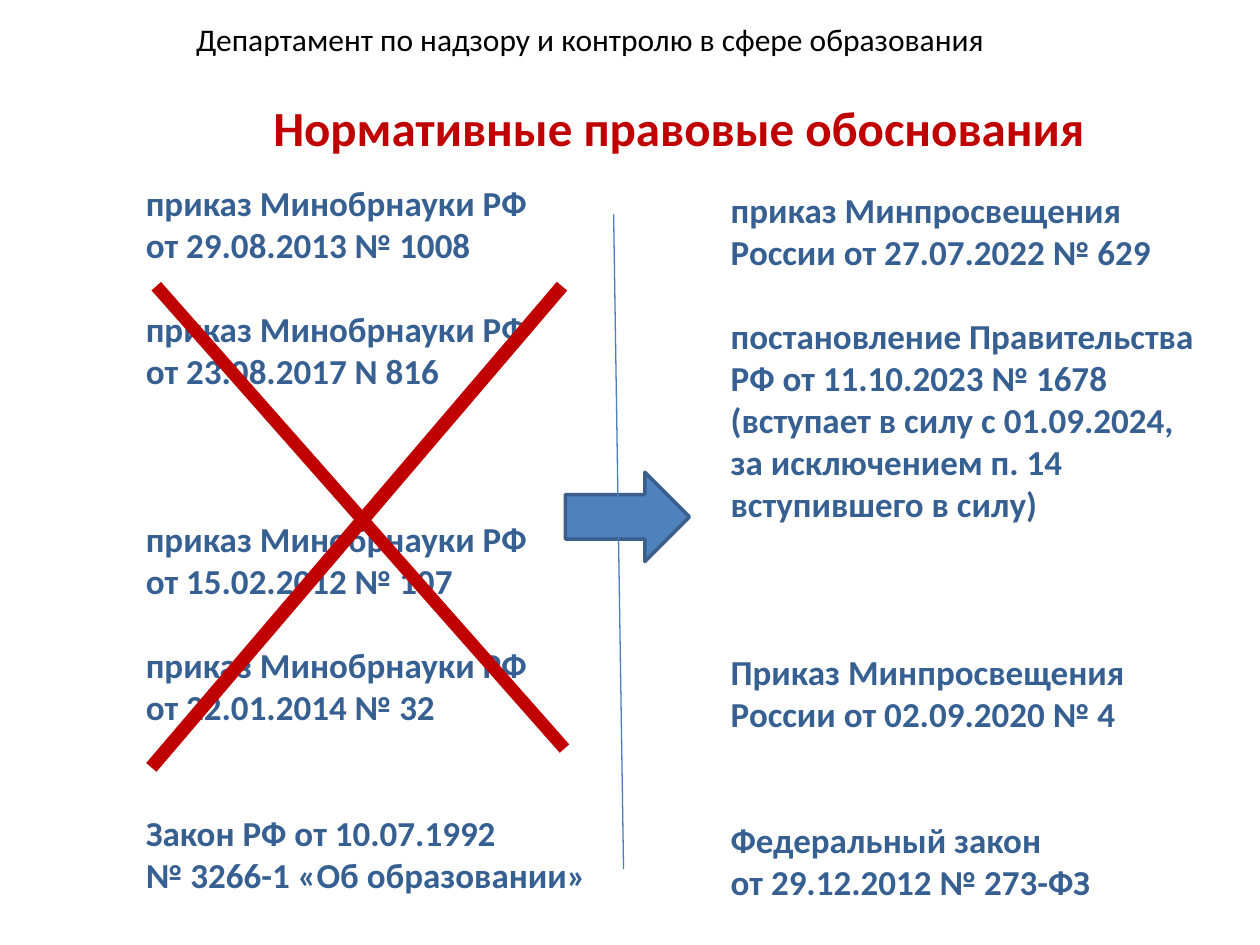
from pptx import Presentation, util as u
from pptx.dml.color import RGBColor
from pptx.enum import shapes, text
from pptx.oxml.ns import qn
from lxml import etree

Cm, Pt = u.Cm, u.Pt
BLACK = RGBColor(0x00, 0x00, 0x00)
RED = RGBColor(0xC0, 0x00, 0x00)
NAVY = RGBColor(0x37, 0x60, 0x92)
ARROW_FILL = RGBColor(0x4F, 0x81, 0xBD)
ARROW_LINE = RGBColor(0x3A, 0x5F, 0x8C)
DIVIDER = RGBColor(0x4B, 0x7E, 0xBC)
LINE_PITCH = 24

OLD_ACTS = [
    (0, ["приказ Минобрнауки РФ", "от 29.08.2013 № 1008"]),
    (1, ["приказ Минобрнауки РФ", "от 23.08.2017 N 816"]),
    (3, ["приказ Минобрнауки РФ", "от 15.02.2012 № 107"]),
    (1, ["приказ Минобрнауки РФ", "от 22.01.2014 № 32"]),
    (2, ["Закон РФ от 10.07.1992", "№ 3266-1 «Об образовании»"]),
]
NEW_ACTS = [
    (0, ["приказ Минпросвещения России от 27.07.2022 № 629"]),
    (1, ["постановление Правительства РФ от 11.10.2023 № 1678 "
         "(вступает в силу с 01.09.2024, за исключением п. 14 вступившего в силу)"]),
    (3, ["Приказ Минпросвещения России от 02.09.2020 № 4"]),
    (2, ["Федеральный закон", "от 29.12.2012 № 273-ФЗ"]),
]


def add_text(slide, box, blocks, size, color, bold=True, align=text.PP_ALIGN.LEFT):
    """Fill a text box with blocks, each preceded by a number of line gaps."""
    tf = slide.shapes.add_textbox(*map(Cm, box)).text_frame
    tf.word_wrap = True
    p = None
    for gap, lines in blocks:
        for i, line in enumerate(lines):
            p = tf.add_paragraph() if p is not None else tf.paragraphs[0]
            p.text = line
            p.alignment = align
            if gap and i == 0:
                p.space_before = Pt(gap * LINE_PITCH)
            font = p.runs[0].font
            font.name, font.size, font.bold = "Calibri", Pt(size), bold
            font.color.rgb = color


def add_line(slide, start, end, color, width):
    """Draw a straight line without a shadow."""
    line = slide.shapes.add_connector(
        shapes.MSO_CONNECTOR.STRAIGHT, *map(Cm, start + end))
    line.line.color.rgb = color
    line.line.width = Pt(width)
    etree.SubElement(line._element.spPr, qn("a:effectLst"))


def add_heading(slide, left, top):
    """Place the department name and the slide title."""
    add_text(slide, (left, top, 17.4, 1.24),
             [(0, ["Департамент по надзору и контролю в сфере образования"])],
             18, BLACK, False, text.PP_ALIGN.RIGHT)
    add_text(slide, (left + 2.09, top + 1.57, 17.8, 1.45),
             [(0, ["Нормативные правовые обоснования"])],
             28, RED, align=text.PP_ALIGN.CENTER)


def add_transition(slide, left, top):
    """Place the arrow and the divider between the two columns."""
    sp = slide.shapes.add_shape(shapes.MSO_SHAPE.RIGHT_ARROW, Cm(left),
                                Cm(top + 5.2), Cm(2.5), Cm(1.8))
    sp.shadow.inherit = False
    sp.fill.solid()
    sp.fill.fore_color.rgb = ARROW_FILL
    sp.line.color.rgb = ARROW_LINE
    sp.line.width = Pt(2)
    add_line(slide, (left + 0.97, top), (left + 1.17, top + 13.2), DIVIDER, 0.75)


def add_cross(slide, left, top):
    """Strike out the repealed acts with two diagonals."""
    add_line(slide, (left + 0.1, top), (left + 8.33, top + 9.32), RED, 7.25)
    add_line(slide, (left + 8.28, top), (left, top + 9.7), RED, 7.75)


def main():
    """Build and save the slide."""
    prs = Presentation()
    prs.slide_width, prs.slide_height = Cm(25.4), Cm(19.05)
    slide = prs.slides.add_slide(prs.slide_layouts[6])
    add_text(slide, (14.48, 3.68, 9.93, 14.78), NEW_ACTS, 20, NAVY)
    add_text(slide, (2.69, 3.53, 9.8, 14.78), OLD_ACTS, 20, NAVY)
    add_heading(slide, 2.69, 0.28)
    add_transition(slide, 11.4, 4.32)
    add_cross(slide, 3.05, 5.77)
    prs.save("out.pptx")


if __name__ == "__main__":
    main()
